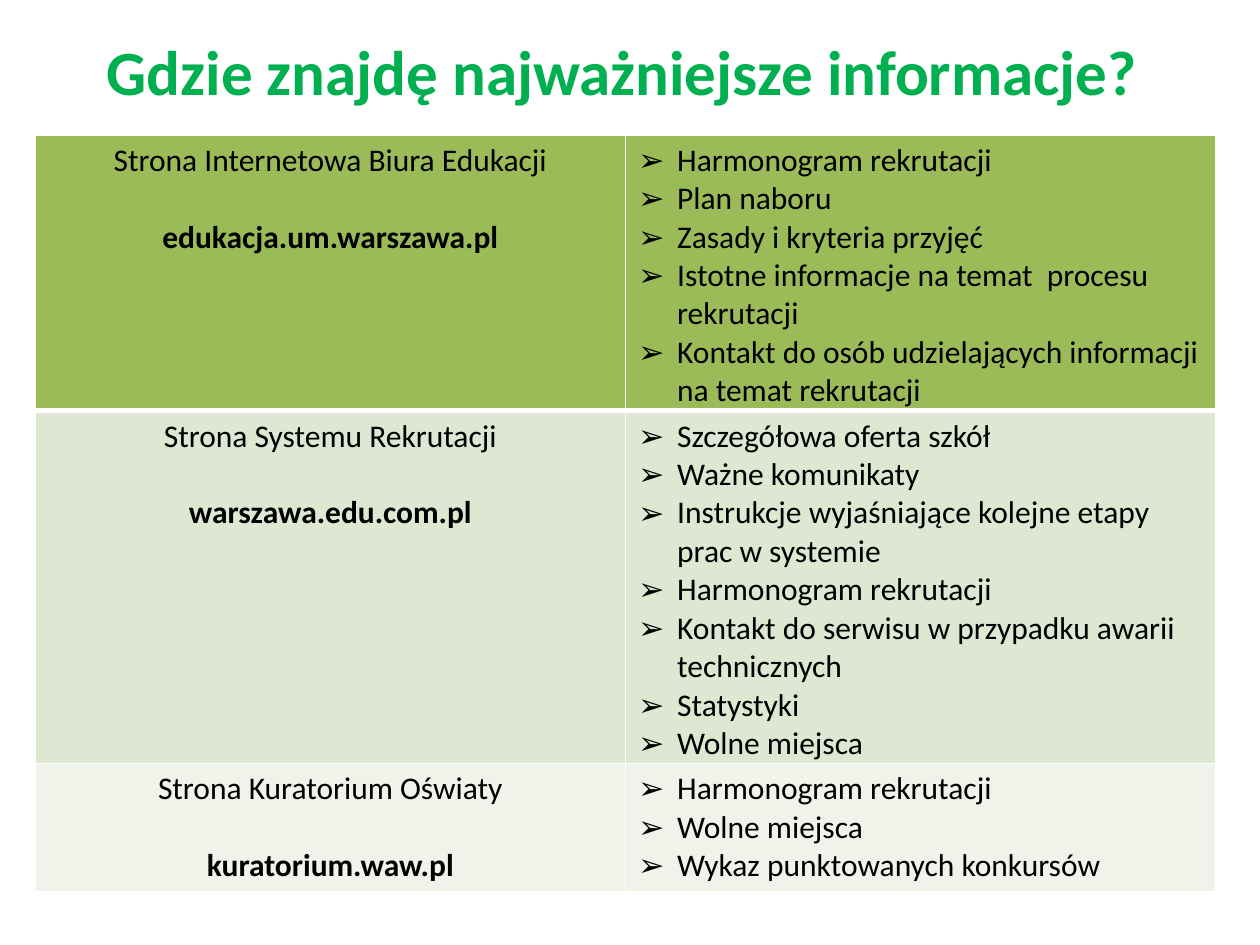
from lxml.etree import SubElement as Sub
from pptx import Presentation
from pptx.dml.color import RGBColor as RGB
from pptx.enum.text import PP_ALIGN as Align
from pptx.oxml.ns import qn
from pptx.util import Inches, Pt

FONT = "Calibri"
GREEN = RGB(0x00, 0xB0, 0x50)
BLACK = RGB(0, 0, 0)
WHITE = RGB(0xFF, 0xFF, 0xFF)
FILLS = [RGB(0x9B, 0xBB, 0x59), RGB(0xDE, 0xE7, 0xD1), RGB(0xEF, 0xF3, 0xEA)]
HEIGHTS = [2.19, 2.8, 1.02]
SITES = [
    ("Strona Internetowa Biura Edukacji", "edukacja.um.warszawa.pl", [
        "Harmonogram rekrutacji",
        "Plan naboru",
        "Zasady i kryteria przyjęć",
        "Istotne informacje na temat  procesu rekrutacji",
        "Kontakt do osób udzielających informacji na temat rekrutacji",
    ]),
    ("Strona Systemu Rekrutacji", "warszawa.edu.com.pl", [
        "Szczegółowa oferta szkół",
        "Ważne komunikaty",
        "Instrukcje wyjaśniające kolejne etapy prac w systemie",
        "Harmonogram rekrutacji",
        "Kontakt do serwisu w przypadku awarii technicznych",
        "Statystyki",
        "Wolne miejsca",
    ]),
    ("Strona Kuratorium Oświaty", "kuratorium.waw.pl", [
        "Harmonogram rekrutacji",
        "Wolne miejsca",
        "Wykaz punktowanych konkursów",
    ]),
]


def add_run(para, text, size=18, color=BLACK, bold=False):
    run = para.add_run()
    run.text = text
    font = run.font
    font.name, font.size, font.bold = FONT, Pt(size), bold
    font.color.rgb = color


def add_title(slide, text):
    box = slide.shapes.add_textbox(Inches(0.35), Inches(0.21),
                                   Inches(9.29), Inches(0.71))
    box.text_frame.word_wrap = True
    para = box.text_frame.paragraphs[0]
    para.alignment = Align.CENTER
    add_run(para, text, 36, GREEN, True)


def set_bullet(para):
    props = para._p.get_or_add_pPr()
    props.set("marL", str(Inches(0.31)))
    props.set("indent", str(-Inches(0.31)))
    Sub(props, qn("a:buFont")).set("typeface", "Arial")
    Sub(props, qn("a:buChar")).set("char", "➢")


def set_border(cell, side, width):
    line = Sub(cell._tc.get_or_add_tcPr(), qn(f"a:ln{side}"), w=str(Pt(width)))
    fill = Sub(line, qn("a:solidFill"))
    Sub(fill, qn("a:srgbClr"), val=str(WHITE))


def style_cell(cell, row):
    top, bottom = (3 if row == 1 else 1), (3 if row == 0 else 1)
    for side, width in zip("LRTB", (1, 1, top, bottom)):
        set_border(cell, side, width)
    cell.fill.solid()
    cell.fill.fore_color.rgb = FILLS[row]
    cell.margin_bottom = 0


def fill_site(cell, name, address):
    frame = cell.text_frame
    head, link = frame.paragraphs[0], frame.add_paragraph()
    head.alignment = link.alignment = Align.CENTER
    link.space_before = Pt(22)
    add_run(head, name)
    add_run(link, address, bold=True)


def fill_list(cell, items):
    frame = cell.text_frame
    for i, item in enumerate(items):
        para = frame.add_paragraph() if i else frame.paragraphs[0]
        set_bullet(para)
        add_run(para, item)


def add_sites(slide):
    table = slide.shapes.add_table(len(SITES), 2, Inches(0.28), Inches(1.07),
                                   Inches(9.37), Inches(sum(HEIGHTS))).table
    for row, (name, address, items) in enumerate(SITES):
        table.rows[row].height = Inches(HEIGHTS[row])
        left, right = table.cell(row, 0), table.cell(row, 1)
        for cell in (left, right):
            style_cell(cell, row)
        fill_site(left, name, address)
        fill_list(right, items)


def main():
    deck = Presentation()
    deck.slide_width, deck.slide_height = Inches(10), Inches(7.5)
    slide = deck.slides.add_slide(deck.slide_layouts[6])
    add_title(slide, "Gdzie znajdę najważniejsze informacje? ")
    add_sites(slide)
    deck.save("out.pptx")


if __name__ == "__main__":
    main()
